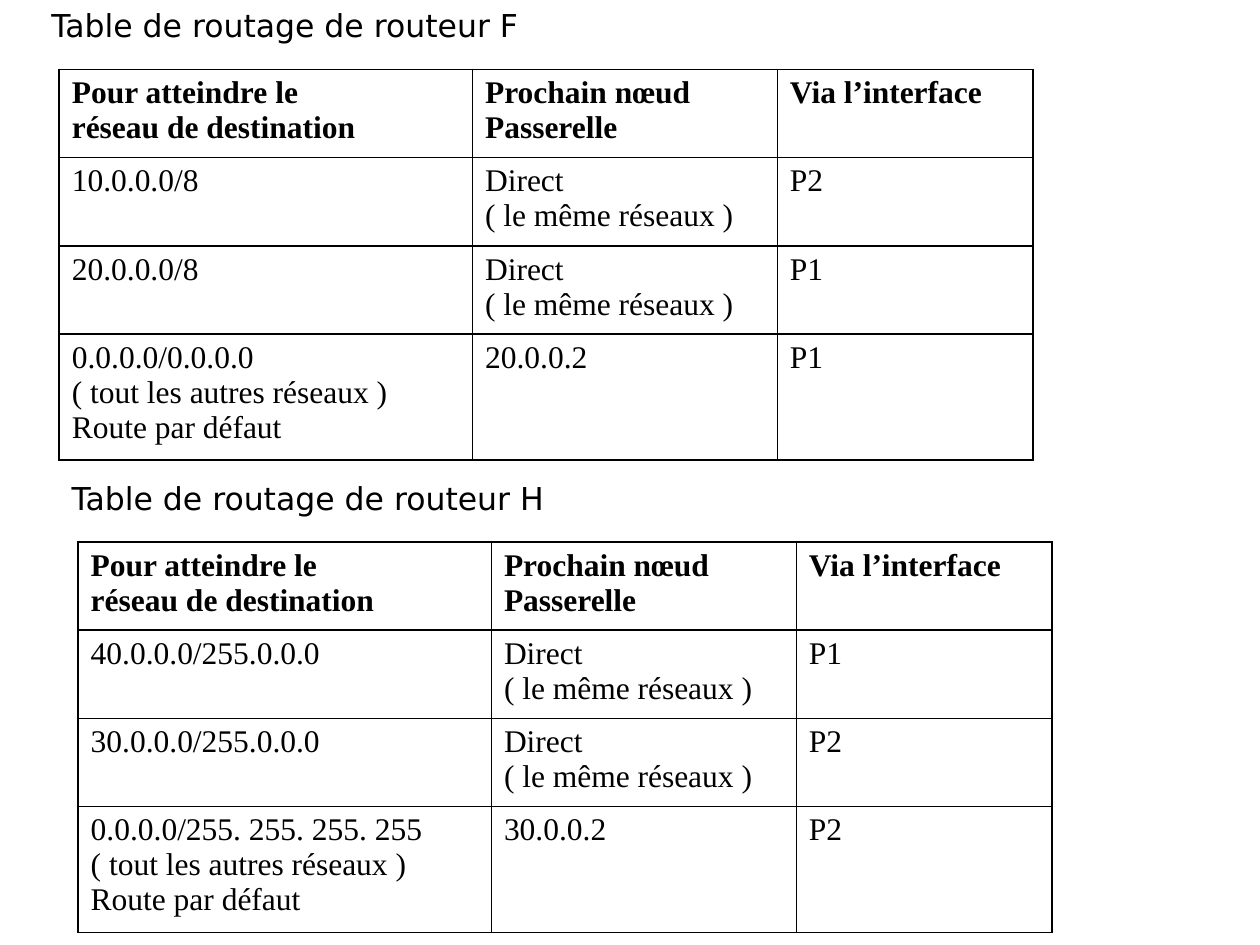
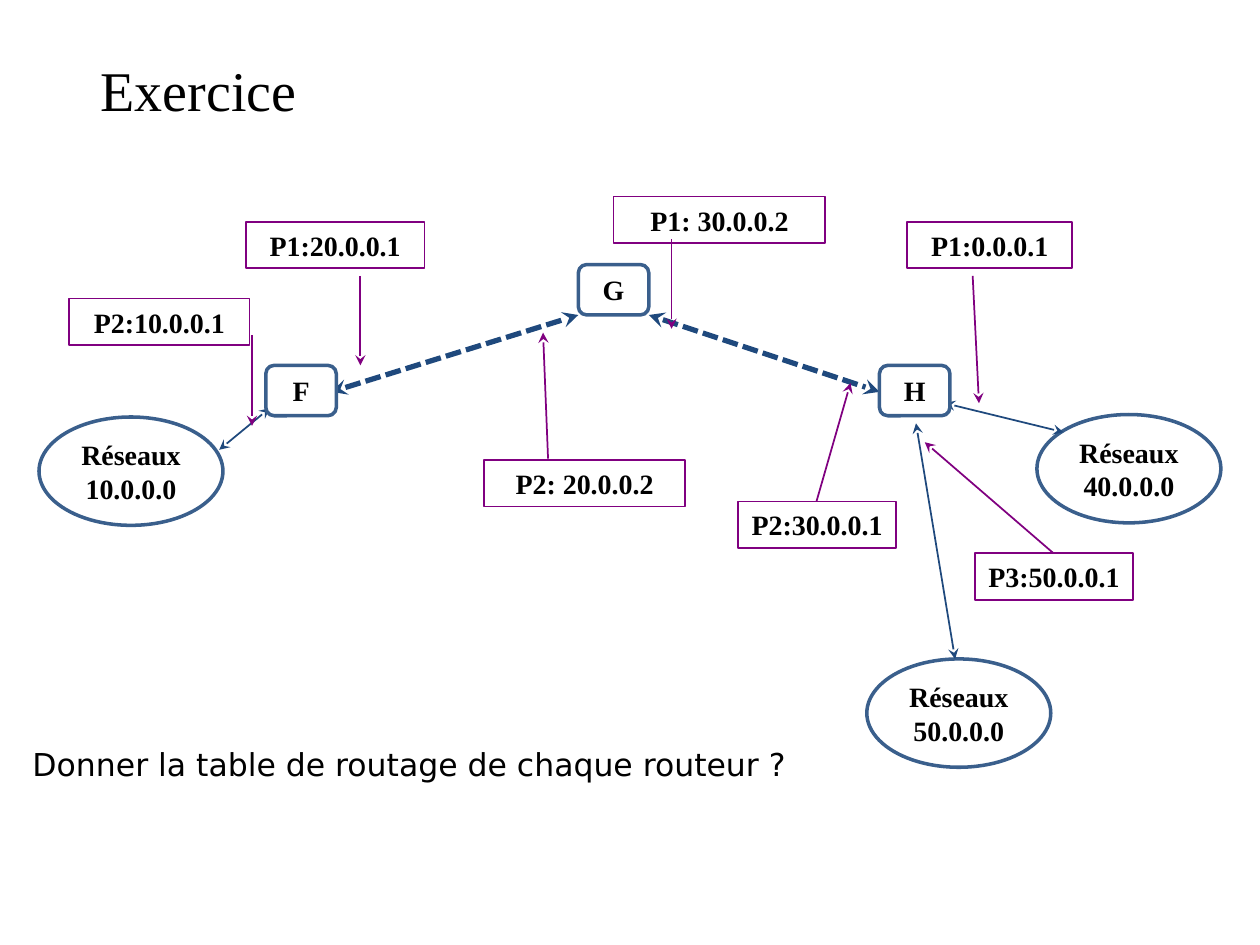
from dataclasses import dataclass

from lxml.etree import SubElement
from pptx import Presentation
from pptx.dml.color import RGBColor
from pptx.enum.dml import MSO_LINE
from pptx.enum.shapes import MSO_CONNECTOR, MSO_SHAPE
from pptx.enum.text import MSO_ANCHOR, PP_ALIGN
from pptx.oxml import parse_xml
from pptx.oxml.ns import nsdecls, qn
from pptx.slide import Slide
from pptx.table import _Cell
from pptx.text.text import TextFrame
from pptx.util import Inches, Pt


@dataclass(frozen=True)
class Theme:
    ink: str = "000000"
    paper: str = "FFFFFF"
    node: str = "3A5F8C"
    link: str = "1F497D"
    port: str = "800080"
    serif: str = "Times New Roman"
    sans: str = "DejaVu Sans"
    title_size: int = 32
    body_size: int = 18
    label_size: int = 16


THEME = Theme()


@dataclass(frozen=True)
class RoutingTable:
    router: str
    left: float
    top: float
    caption_left: float
    caption_top: float
    row_height: float
    last_height: float
    routes: tuple[tuple[str, str, str], ...]


@dataclass(frozen=True)
class Node:
    label: str
    left: float
    top: float


@dataclass(frozen=True)
class Port:
    label: str
    left: float
    top: float
    width: float
    start: tuple[float, float]
    target: tuple[float, float]


@dataclass(frozen=True)
class Link:
    start: tuple[float, float]
    end: tuple[float, float]
    backbone: bool = False


COLUMN_WIDTHS = (3.28, 2.42, 2.03)
HEADINGS = ("Pour atteindre le\nréseau de destination", "Prochain nœud Passerelle", "Via l’interface")
DIRECT = "Direct\n( le même réseaux )"
DEFAULT_ROUTE = "\n( tout les autres réseaux )\nRoute par défaut"

ROUTING_TABLES = (
    RoutingTable("F", 0.47, 0.55, 0.31, 0, 0.7, 1.0, (
        ("10.0.0.0/8", DIRECT, "P2"),
        ("20.0.0.0/8", DIRECT, "P1"),
        ("0.0.0.0/0.0.0.0" + DEFAULT_ROUTE, "20.0.0.2", "P1"),
    )),
    RoutingTable("H", 0.62, 4.3, 0.47, 3.75, 0.65, 0.94, (
        ("40.0.0.0/255.0.0.0", DIRECT, "P1"),
        ("30.0.0.0/255.0.0.0", DIRECT, "P2"),
        ("0.0.0.0/255. 255. 255. 255" + DEFAULT_ROUTE, "30.0.0.2", "P2"),
    )),
)

NETWORKS = (
    Node("Réseaux 10.0.0.0", 0.31, 3.31),
    Node("Réseaux 40.0.0.0", 8.23, 3.29),
    Node("Réseaux 50.0.0.0", 6.88, 5.23),
)
ROUTERS = (Node("F", 2.11, 2.9), Node("G", 4.59, 2.1), Node("H", 6.98, 2.9))
LINKS = (
    Link((1.74, 3.57), (2.14, 3.24)),
    Link((2.63, 3.11), (4.59, 2.5), backbone=True),
    Link((5.15, 2.5), (6.98, 3.11), backbone=True),
    Link((7.5, 3.2), (8.44, 3.43)),
    Link((7.27, 3.36), (7.58, 5.23)),
)
PORTS = (
    Port("P2:10.0.0.1", 0.55, 2.37, 1.43, (2, 2.66), (2, 3.38)),
    Port("P1:20.0.0.1", 1.95, 1.76, 1.42, (2.86, 2.19), (2.86, 2.9)),
    Port("P2: 20.0.0.2", 3.84, 3.65, 1.6, (4.35, 3.64), (4.31, 2.64)),
    Port("P1: 30.0.0.2", 4.87, 1.56, 1.68, (5.33, 1.9), (5.33, 2.61)),
    Port("P2:30.0.0.1", 5.86, 3.98, 1.25, (6.48, 3.98), (6.75, 3.04)),
    Port("P1:0.0.0.1", 7.2, 1.76, 1.31, (7.72, 2.19), (7.77, 3.2)),
    Port("P3:50.0.0.1", 7.74, 4.39, 1.25, (8.36, 4.39), (7.34, 3.51)),
)


def write_text(frame: TextFrame, text: str, *, size: int = THEME.body_size,
               font: str = THEME.serif, bold: bool = False,
               align: PP_ALIGN = PP_ALIGN.LEFT, wrap: bool = True) -> None:
    frame.word_wrap = wrap
    for index, line in enumerate(text.split("\n")):
        paragraph = frame.add_paragraph() if index else frame.paragraphs[0]
        paragraph.alignment = align
        run = paragraph.add_run()
        run.text = line
        run.font.size = Pt(size)
        run.font.name = font
        run.font.bold = bold
        run.font.color.rgb = RGBColor.from_string(THEME.ink)


def add_caption(slide: Slide, text: str, left: float, top: float, width: float,
                height: float = 0.4, **text_format) -> None:
    caption = slide.shapes.add_textbox(Inches(left), Inches(top), Inches(width), Inches(height))
    write_text(caption.text_frame, text, **text_format)


def format_cell(cell: _Cell, text: str, bold: bool) -> None:
    write_text(cell.text_frame, text, bold=bold)
    cell.fill.solid()
    cell.fill.fore_color.rgb = RGBColor.from_string(THEME.paper)
    properties = cell._tc.get_or_add_tcPr()
    for index, side in enumerate(("lnL", "lnR", "lnT", "lnB")):
        border = parse_xml(
            f'<a:{side} {nsdecls("a")} w="{Pt(1)}"><a:solidFill>'
            f'<a:srgbClr val="{THEME.ink}"/></a:solidFill></a:{side}>')
        properties.insert(index, border)


def add_routing_table(slide: Slide, routing: RoutingTable) -> None:
    add_caption(slide, f"Table de routage de routeur {routing.router}",
                routing.caption_left, routing.caption_top, 4, font=THEME.sans)
    rows = (HEADINGS, *routing.routes)
    heights = [routing.row_height] * (len(rows) - 1) + [routing.last_height]
    grid = slide.shapes.add_table(
        len(rows), len(COLUMN_WIDTHS), Inches(routing.left), Inches(routing.top),
        Inches(sum(COLUMN_WIDTHS)), Inches(sum(heights))).table
    grid.first_row = grid.horz_banding = False
    for column, width in zip(grid.columns, COLUMN_WIDTHS):
        column.width = Inches(width)
    for row_index, (entries, height) in enumerate(zip(rows, heights)):
        grid.rows[row_index].height = Inches(height)
        for column_index, entry in enumerate(entries):
            format_cell(grid.cell(row_index, column_index), entry, bold=row_index == 0)


def add_box(slide: Slide, preset: MSO_SHAPE, label: str, left: float, top: float,
            width: float, height: float, *, color: str = THEME.node,
            weight: float = 2, filled: bool = True, wrap: bool = True) -> None:
    box = slide.shapes.add_shape(preset, Inches(left), Inches(top), Inches(width), Inches(height))
    box.shadow.inherit = False
    if filled:
        box.fill.solid()
        box.fill.fore_color.rgb = RGBColor.from_string(THEME.paper)
    else:
        box.fill.background()
    box.line.color.rgb = RGBColor.from_string(color)
    box.line.width = Pt(weight)
    box.text_frame.vertical_anchor = MSO_ANCHOR.MIDDLE
    write_text(box.text_frame, label, size=THEME.label_size, bold=True,
               align=PP_ALIGN.CENTER, wrap=wrap)


def add_arrow(slide: Slide, start: tuple[float, float], end: tuple[float, float], *,
              color: str, weight: float = 1, dashed: bool = False,
              both_ends: bool = False) -> None:
    arrow = slide.shapes.add_connector(
        MSO_CONNECTOR.STRAIGHT, *(Inches(value) for value in (*start, *end)))
    arrow.line.color.rgb = RGBColor.from_string(color)
    arrow.line.width = Pt(weight)
    if dashed:
        arrow.line.dash_style = MSO_LINE.SQUARE_DOT
    outline = arrow.line._get_or_add_ln()
    for tip in ("a:headEnd", "a:tailEnd") if both_ends else ("a:tailEnd",):
        SubElement(outline, qn(tip), type="stealth")
    SubElement(arrow._element.spPr, qn("a:effectLst"))


def build_exercise(slide: Slide) -> None:
    add_caption(slide, "Exercice", 0.7, 0.39, 1.86, 0.64, size=THEME.title_size)
    add_caption(slide, "Donner la table de routage de chaque routeur ?",
                0.16, 5.86, 6.36, 0.71, font=THEME.sans)
    for network in NETWORKS:
        add_box(slide, MSO_SHAPE.OVAL, network.label, network.left, network.top, 1.46, 0.86)
    for link in LINKS:
        add_arrow(slide, link.start, link.end, color=THEME.link,
                  weight=3 if link.backbone else 1, dashed=link.backbone, both_ends=True)
    for port in PORTS:
        add_box(slide, MSO_SHAPE.RECTANGLE, port.label, port.left, port.top, port.width, 0.37,
                color=THEME.port, weight=1, filled=False, wrap=False)
        add_arrow(slide, port.start, port.target, color=THEME.port)
    for router in ROUTERS:
        add_box(slide, MSO_SHAPE.ROUNDED_RECTANGLE, router.label,
                router.left, router.top, 0.56, 0.4)


def main() -> None:
    deck = Presentation()
    deck.slide_width, deck.slide_height = Inches(10), Inches(7.5)
    blank = deck.slide_layouts[6]
    routing_slide = deck.slides.add_slide(blank)
    for routing in ROUTING_TABLES:
        add_routing_table(routing_slide, routing)
    build_exercise(deck.slides.add_slide(blank))
    deck.save("out.pptx")


if __name__ == "__main__":
    main()
